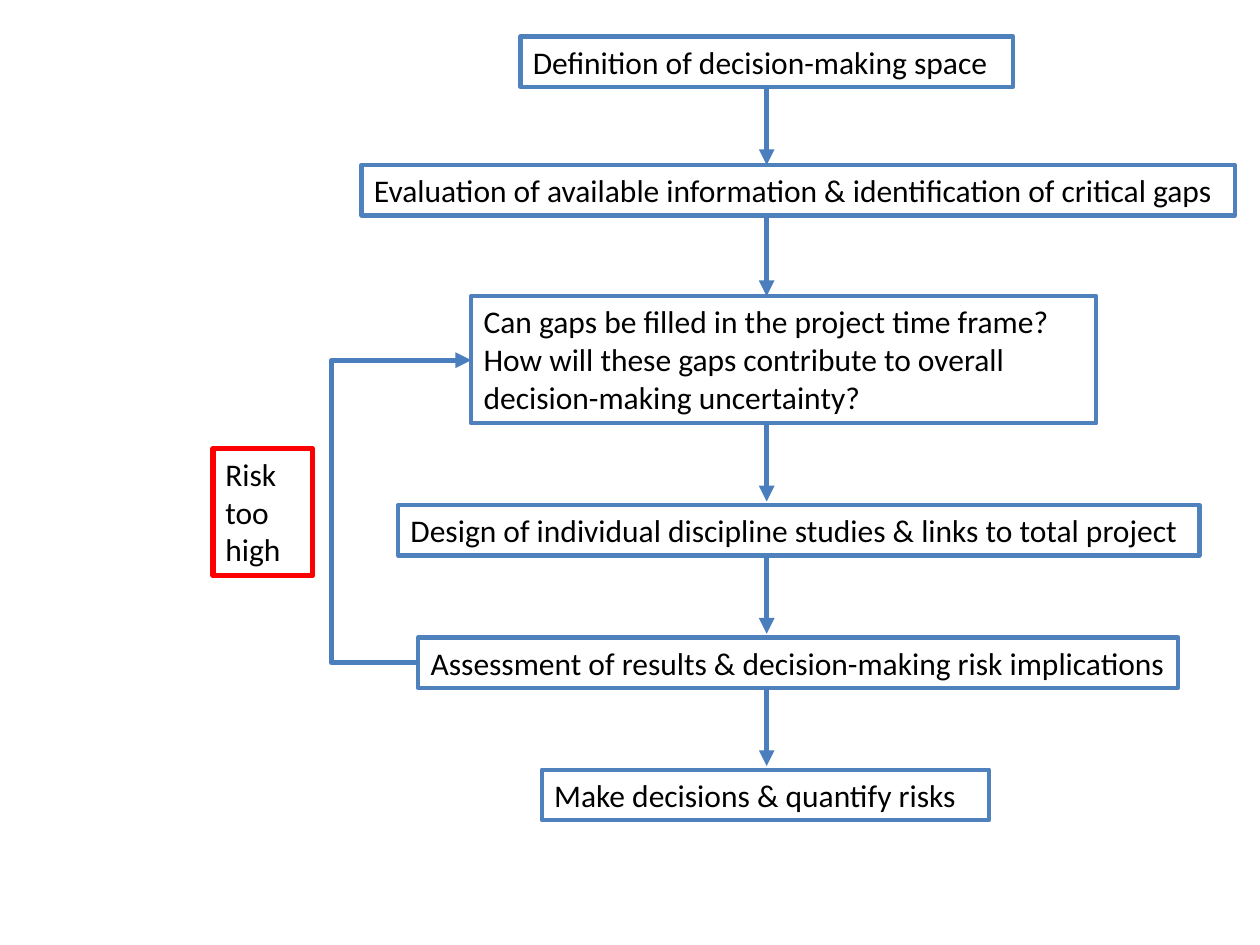
"""Build a flow chart of decision-making steps with a risk feedback loop."""
import pptx
import pptx.util
import pptx.dml.color
import pptx.enum.shapes
import pptx.enum.text
import pptx.oxml
import pptx.oxml.ns

HUES = {"box": "4F81BD", "link": "4B7EBC", "risk": "FF0000", "text": "000000"}
KIND = pptx.enum.shapes.MSO_CONNECTOR

deck = pptx.Presentation()
deck.slide_width = pptx.util.Inches(10)
deck.slide_height = pptx.util.Inches(7.5)
slide = deck.slides.add_slide(deck.slide_layouts[6])
col = deck.slide_width / 100
row = deck.slide_height / 75


def add_box(text, left, top, width, height, wrap, hue="box", weight=2.5):
    box = slide.shapes.add_textbox(
        int(left * col), int(top * row), int(width * col), int(height * row))
    box.line.color.rgb = pptx.dml.color.RGBColor.from_string(HUES[hue])
    box.line.width = pptx.util.Pt(weight)
    frame = box.text_frame
    frame.text = text
    frame.word_wrap = wrap
    frame.auto_size = pptx.enum.text.MSO_AUTO_SIZE.SHAPE_TO_FIT_TEXT
    for para in frame.paragraphs:
        for run in para.runs:
            run.font.name = "Calibri"
            run.font.size = pptx.util.Pt(18)
            run.font.color.rgb = pptx.dml.color.RGBColor.from_string(HUES["text"])
    return box


def add_link(kind, x1, y1, x2, y2):
    link = slide.shapes.add_connector(
        kind, int(x1 * col), int(y1 * row), int(x2 * col), int(y2 * row))
    link.line.color.rgb = pptx.dml.color.RGBColor.from_string(HUES["link"])
    link.line.width = pptx.util.Pt(3)
    props = link._element.spPr
    tip = pptx.oxml.parse_xml(
        f'<a:tailEnd {pptx.oxml.ns.nsdecls("a")} type="triangle"/>')
    props.find(pptx.oxml.ns.qn("a:ln")).append(tip)
    props.append(pptx.oxml.parse_xml(
        f'<a:effectLst {pptx.oxml.ns.nsdecls("a")}/>'))
    return link


steps = [
    ("Definition of decision-making space", 41.3, 2.9, 39.1, 4, False),
    ("Evaluation of available information & identification of critical gaps",
     28.7, 13.1, 69.3, 4, True),
    ("Can gaps be filled in the project time frame?\n"
     "How will these gaps contribute to overall decision-making uncertainty?",
     37.4, 23.5, 49.6, 10.1, True),
    ("Design of individual discipline studies & links to total project",
     31.6, 40.1, 63.6, 4, False),
    ("Assessment of results & decision-making risk implications",
     33.2, 50.6, 60.3, 4, False),
    ("Make decisions & quantify risks", 43, 61.1, 35.5, 4, False),
]
boxes = [add_box(*step) for step in steps]

loop = add_link(KIND.ELBOW, 33.2, 52.6, 37.4, 28.6)
bend = loop._element.spPr.xpath("./a:prstGeom/a:avLst")[0]
bend.append(pptx.oxml.parse_xml(
    f'<a:gd {pptx.oxml.ns.nsdecls("a")} name="adj1" fmla="val -164100"/>'))

add_box("Risk too high", 16.9, 35.6, 7.9, 10.1, True, "risk", 3)

axis, drop = 60.85, 6.2
links = [add_link(KIND.STRAIGHT, axis, top, axis, top + drop)
         for top in (6.9, 17.3, 33.6, 44.1, 54.6)]
links[0].begin_connect(boxes[0], 2)

deck.save("out.pptx")
